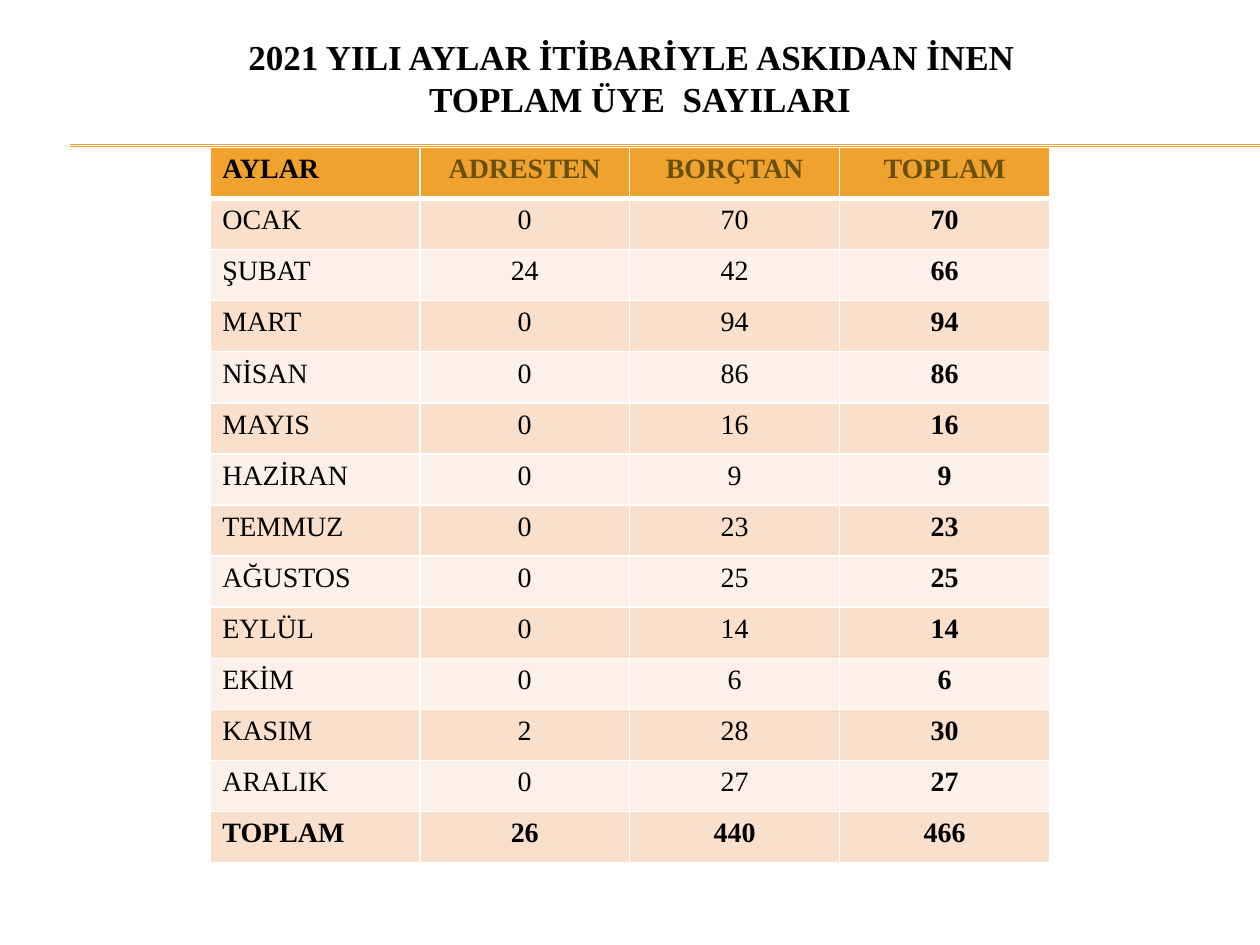
"""Build the slide of monthly member counts for 2021."""
import collections

import lxml.etree
import pptx
import pptx.dml.color
import pptx.enum.shapes
import pptx.enum.text
import pptx.oxml.ns
import pptx.util

Cm = pptx.util.Cm
Pt = pptx.util.Pt
RGBColor = pptx.dml.color.RGBColor
qn = pptx.oxml.ns.qn
Box = collections.namedtuple("Box", "left top width height")

FONT = "Times New Roman"
BLACK = RGBColor(0x00, 0x00, 0x00)
WHITE = RGBColor(0xFF, 0xFF, 0xFF)
ORANGE = RGBColor(0xF0, 0xA2, 0x2E)
BROWN = RGBColor(0x69, 0x50, 0x08)
BANDS = (RGBColor(0xF9, 0xE0, 0xCD), RGBColor(0xFC, 0xF0, 0xE8))

TITLE_LINES = ("2021 YILI AYLAR İTİBARİYLE ASKIDAN İNEN  ", "TOPLAM ÜYE  SAYILARI")
HEADERS = ("AYLAR", "ADRESTEN", "BORÇTAN", "TOPLAM")
MONTHS = (
    ("OCAK", 0, 70),
    ("ŞUBAT", 24, 42),
    ("MART", 0, 94),
    ("NİSAN", 0, 86),
    ("MAYIS", 0, 16),
    ("HAZİRAN", 0, 9),
    ("TEMMUZ", 0, 23),
    ("AĞUSTOS", 0, 25),
    ("EYLÜL", 0, 14),
    ("EKİM", 0, 6),
    ("KASIM", 2, 28),
    ("ARALIK", 0, 27),
)


def add_run(paragraph, text, size, color, bold):
    """Add one formatted run to a paragraph."""
    run = paragraph.add_run()
    run.text = text
    run.font.name = FONT
    run.font.size = Pt(size)
    run.font.bold = bold
    run.font.color.rgb = color


def place_title(slide, box):
    """Place and format the title placeholder in the box."""
    title = slide.shapes.title
    title.left, title.top, title.width, title.height = (Cm(length) for length in box)
    text_frame = title.text_frame
    text_frame.word_wrap = True
    text_frame.auto_size = pptx.enum.text.MSO_AUTO_SIZE.NONE
    text_frame.vertical_anchor = pptx.enum.text.MSO_ANCHOR.MIDDLE
    paragraph = text_frame.paragraphs[0]
    paragraph.alignment = pptx.enum.text.PP_ALIGN.CENTER
    paragraph.line_spacing = 1.0
    for index, line in enumerate(TITLE_LINES):
        if index:
            paragraph.add_line_break()
        add_run(paragraph, line, 20, BLACK, True)


def place_rule(slide, box):
    """Draw a thin line along the top and the bottom of the box."""
    for top in (box.top, box.top + box.height):
        line = slide.shapes.add_connector(
            pptx.enum.shapes.MSO_CONNECTOR.STRAIGHT,
            Cm(box.left), Cm(top), Cm(box.left + box.width), Cm(top))
        line.line.color.rgb = ORANGE
        line.line.width = Pt(0.75)
        lxml.etree.SubElement(line._element.spPr, qn("a:effectLst"))


def set_borders(cell, widths):
    """Give the cell white borders of the given widths, keyed by side."""
    properties = cell._tc.get_or_add_tcPr()
    for side, width in widths.items():
        border = lxml.etree.SubElement(properties, qn("a:ln" + side), w=str(Pt(width)))
        fill = lxml.etree.SubElement(border, qn("a:solidFill"))
        lxml.etree.SubElement(fill, qn("a:srgbClr"), val=str(WHITE))


def format_cell(cell, text, fill, color, bold, centered, widths):
    """Write one cell with its borders, fill and text."""
    set_borders(cell, widths)
    cell.fill.solid()
    cell.fill.fore_color.rgb = fill
    paragraph = cell.text_frame.paragraphs[0]
    if centered:
        paragraph.alignment = pptx.enum.text.PP_ALIGN.CENTER
    add_run(paragraph, str(text), 16, color, bold)


def table_rows():
    """Return the header, the months with their sums, and the totals."""
    months = [(*month, sum(month[1:])) for month in MONTHS]
    totals = [sum(column) for column in list(zip(*months))[1:]]
    return [HEADERS, *months, ("TOPLAM", *totals)]


def place_table(slide, box):
    """Place the table of months in the box, with equal rows and columns."""
    rows = table_rows()
    last_row, last_column = len(rows) - 1, len(HEADERS) - 1
    table = slide.shapes.add_table(
        len(rows), len(HEADERS), *(Cm(length) for length in box)).table
    for column in table.columns:
        column.width = Cm(box.width / len(HEADERS))
    for row_index, values in enumerate(rows):
        table.rows[row_index].height = Cm(box.height / len(rows))
        is_header = row_index == 0
        fill = ORANGE if is_header else BANDS[(row_index - 1) % 2]
        widths = {"L": 1, "R": 1, "T": 3 if row_index == 1 else 1, "B": 3 if is_header else 1}
        for column_index, value in enumerate(values):
            color = BROWN if is_header and column_index else BLACK
            bold = row_index in (0, last_row) or column_index == last_column
            format_cell(table.cell(row_index, column_index), value, fill,
                        color, bold, column_index > 0, widths)


def main():
    """Build and save the presentation."""
    presentation = pptx.Presentation()
    presentation.slide_width, presentation.slide_height = Cm(25.4), Cm(19.05)
    slide = presentation.slides.add_slide(presentation.slide_layouts[5])
    place_rule(slide, Box(1.42, 2.92, 23.98, 0.03))
    place_table(slide, Box(4.23, 2.97, 16.93, 14.43))
    place_title(slide, Box(0.84, 0.4, 24.13, 2.34))
    presentation.save("out.pptx")


if __name__ == "__main__":
    main()
